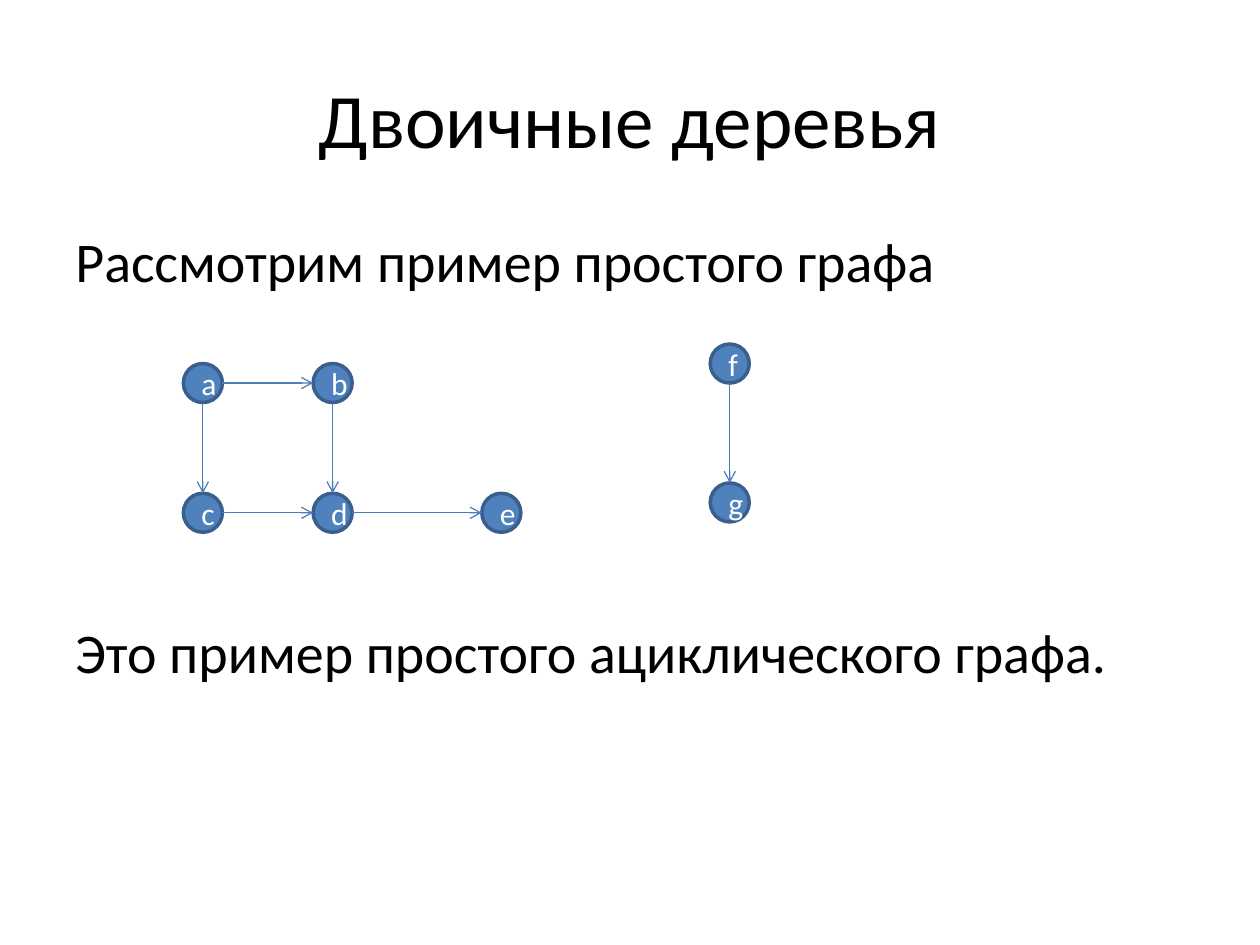
from dataclasses import dataclass
from lxml.etree import SubElement
from pptx import Presentation
from pptx.dml.color import RGBColor as Rgb
from pptx.enum.shapes import MSO_CONNECTOR as Link, MSO_SHAPE as Form
from pptx.enum.text import MSO_ANCHOR as Anchor, PP_ALIGN as Align
from pptx.oxml.ns import qn
from pptx.util import Inches, Pt


@dataclass(frozen=True)
class Theme:
    font: str = "Calibri"
    ink: str = "000000"
    fill: str = "4F81BD"
    rim: str = "3A5F8C"
    edge: str = "4B7EBC"
    label: str = "FFFFFF"
    title: int = 44
    body: int = 32
    node: int = 18
    gap: int = 185


THEME = Theme()
WIDE, HIGH = 10, 7.5

# Graph grid: centre of the first node, step between cells, node size
LEFT, TOP, STEP, SIZE = 1.61, 3.04, 1.03, 0.31

# Node name: column and row
NODES = {
    "a": (0, 0), "b": (1, 0),
    "c": (0, 1), "d": (1, 1), "e": (2.3, 1),
    "g": (4.06, 0.92), "f": (4.06, -0.15),
}
EDGES = ["ac", "ab", "bd", "cd", "de", "fg"]


def style(para, size, color, align):
    para.alignment = align
    for run in para.runs:
        run.font.name = THEME.font
        run.font.size = Pt(size)
        run.font.color.rgb = Rgb.from_string(color)


def add_text(slide, box, lines, size, align, anchor):
    """Place a text box; box holds shares of the slide's size."""
    x, y, w, h = box
    shape = slide.shapes.add_textbox(
        Inches(x * WIDE), Inches(y * HIGH), Inches(w * WIDE), Inches(h * HIGH))
    frame = shape.text_frame
    frame.word_wrap = True
    frame.vertical_anchor = anchor
    frame.text = "\n".join(lines)
    for para in frame.paragraphs:
        style(para, size, THEME.ink, align)
    for para in frame.paragraphs[1:]:
        para.space_before = Pt(THEME.gap)


def centre(name):
    col, row = NODES[name]
    return LEFT + col * STEP, TOP + row * STEP


def add_node(slide, name):
    x, y = centre(name)
    node = slide.shapes.add_shape(
        Form.OVAL, Inches(x - SIZE / 2), Inches(y - SIZE / 2),
        Inches(SIZE), Inches(SIZE))
    node.shadow.inherit = False
    node.fill.solid()
    node.fill.fore_color.rgb = Rgb.from_string(THEME.fill)
    node.line.color.rgb = Rgb.from_string(THEME.rim)
    node.line.width = Pt(2)
    frame = node.text_frame
    frame.text = name
    frame.vertical_anchor = Anchor.MIDDLE
    style(frame.paragraphs[0], THEME.node, THEME.label, Align.CENTER)


def add_edge(slide, start, end):
    """Draw an arrow between the facing rims of two nodes."""
    (x1, y1), (x2, y2) = centre(start), centre(end)
    rim = SIZE / 2
    dx, dy = (rim, 0) if x2 > x1 else (0, rim)
    ends = (x1 + dx, y1 + dy, x2 - dx, y2 - dy)
    edge = slide.shapes.add_connector(Link.STRAIGHT, *map(Inches, ends))
    edge.line.color.rgb = Rgb.from_string(THEME.edge)
    edge.line.width = Pt(0.75)
    SubElement(edge.line._get_or_add_ln(), qn("a:tailEnd"), type="arrow")
    SubElement(edge._element.spPr, qn("a:effectLst"))


def main():
    deck = Presentation()
    deck.slide_width, deck.slide_height = Inches(WIDE), Inches(HIGH)
    slide = deck.slides.add_slide(deck.slide_layouts[6])

    # Title and body text
    add_text(slide, (0.05, 0.04, 0.9, 0.17), ["Двоичные деревья"],
             THEME.title, Align.CENTER, Anchor.MIDDLE)
    add_text(slide, (0.05, 0.233, 0.9, 0.66),
             ["Рассмотрим пример простого графа",
              "Это пример простого ациклического графа."],
             THEME.body, Align.LEFT, Anchor.TOP)

    # Graph
    for name in NODES:
        add_node(slide, name)
    for start, end in EDGES:
        add_edge(slide, start, end)

    deck.save("out.pptx")


if __name__ == "__main__":
    main()
